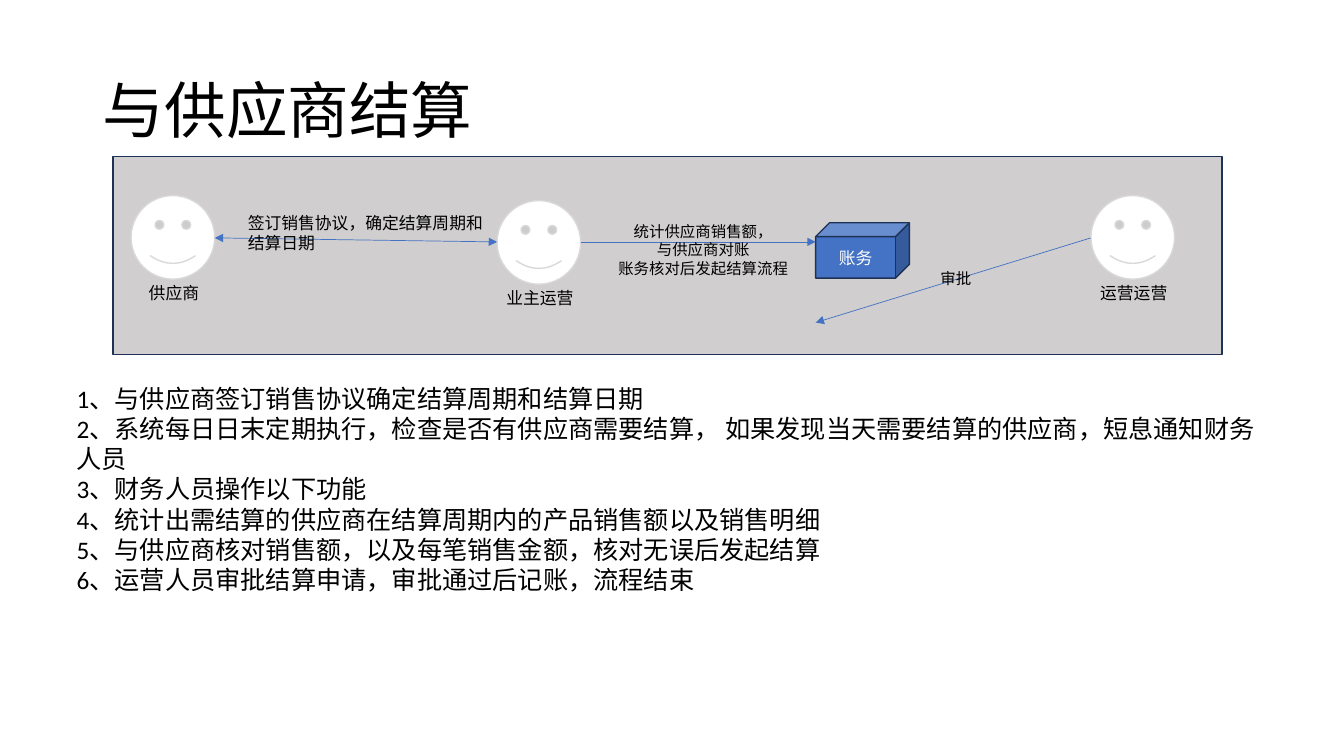
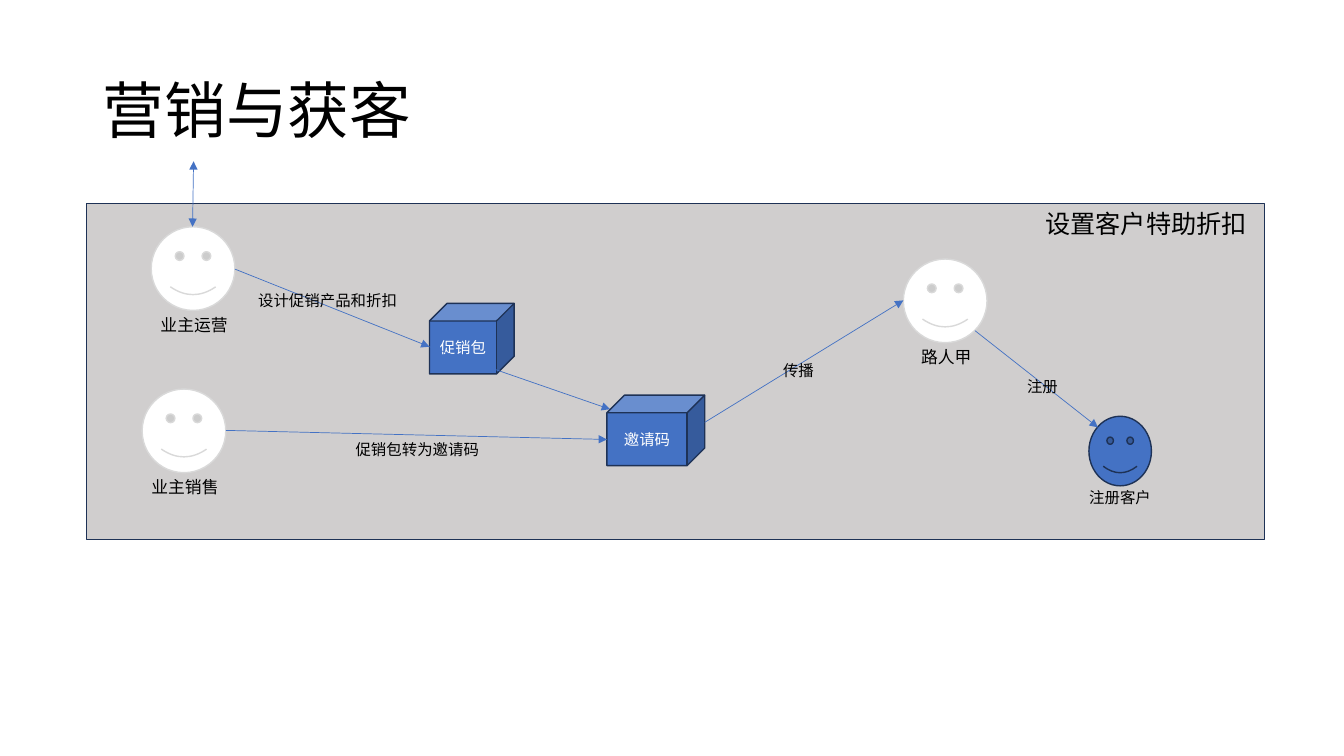
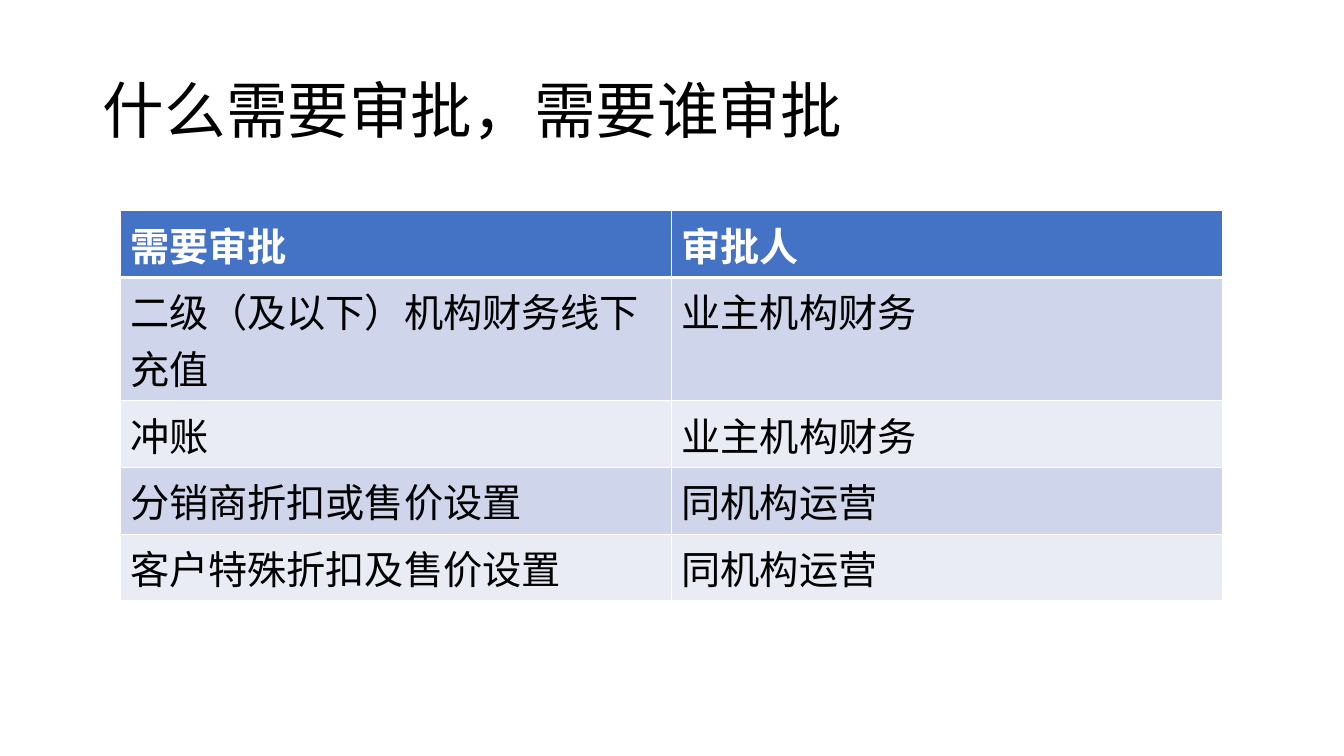
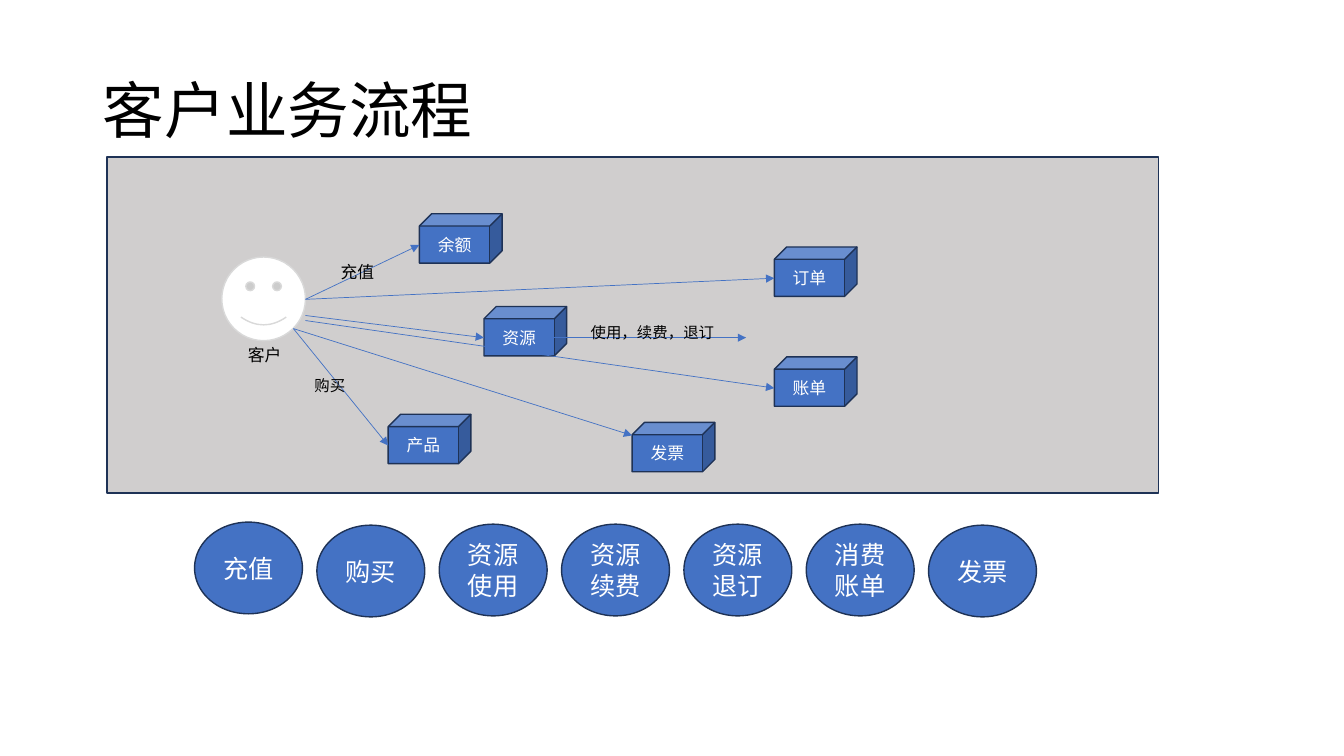
from lxml import etree
from pptx import Presentation
from pptx import util as u
from pptx.dml.color import RGBColor
from pptx.enum import lang, shapes, text
from pptx.oxml import ns

PX = 9144  # 100 px to the inch
FONT = "Calibri"
COLORS = {
    "black": "000000",
    "white": "FFFFFF",
    "blue": "4472C4",
    "navy": "1E3256",
    "panel": "D0CECE",
    "face_line": "D9D9D9",
    "band_dark": "CFD5EA",
    "band_light": "E9EBF5",
}
TITLE_ONLY, TITLE_AND_BODY = 5, 1
LEFT, CENTER = text.PP_ALIGN.LEFT, text.PP_ALIGN.CENTER
FACE_SIZE = 83
CUBE_SIZE = (82, 49)


def px(*lengths):
    return [u.Emu(round(length * PX)) for length in lengths]


def rgb(color):
    return RGBColor.from_string(COLORS[color])


def write(frame, lines, size, color="black", align=LEFT, bold=False):
    """Put each line into its own paragraph of the frame."""
    frame.word_wrap = True
    for index, line in enumerate(lines):
        paragraph = frame.add_paragraph() if index else frame.paragraphs[0]
        paragraph.alignment = align
        run = paragraph.add_run()
        run.text = line
        font = run.font
        font.name, font.size, font.bold = FONT, u.Pt(size), bold
        font.color.rgb = rgb(color)
        font.language_id = lang.MSO_LANGUAGE_ID.SIMPLIFIED_CHINESE


def place(shape, left, top, width, height):
    shape.left, shape.top, shape.width, shape.height = px(left, top, width, height)


def add_slide(presentation, title, layout=TITLE_ONLY):
    slide = presentation.slides.add_slide(presentation.slide_layouts[layout])
    shape = slide.shapes.title
    place(shape, 92, 40, 1150, 145)
    write(shape.text_frame, [title], 44)
    shape.text_frame.vertical_anchor = text.MSO_ANCHOR.MIDDLE
    shape.text_frame.paragraphs[0].line_spacing = 0.9
    return slide


def add_steps(slide, box, steps):
    """Fill the body placeholder with lines that carry their own numbers."""
    body = slide.placeholders[1]
    place(body, *box)
    frame = body.text_frame
    write(frame, steps, 18)
    frame.auto_size = text.MSO_AUTO_SIZE.NONE
    for paragraph in frame.paragraphs:
        paragraph.space_before = u.Pt(0)
        properties = paragraph._p.get_or_add_pPr()
        properties.set("marL", "0")
        properties.set("indent", "0")
        etree.SubElement(properties, ns.qn("a:buNone"))


def add_shape(slide, kind, box, fill="blue", line="navy"):
    shape = slide.shapes.add_shape(kind, *px(*box))
    shape.shadow.inherit = False
    shape.fill.solid()
    shape.fill.fore_color.rgb = rgb(fill)
    shape.line.color.rgb = rgb(line)
    shape.line.width = u.Pt(1)
    return shape


def add_panel(slide, *box):
    add_shape(slide, shapes.MSO_SHAPE.RECTANGLE, box, fill="panel")


def add_label(slide, box, *lines, size=11, align=CENTER):
    label = slide.shapes.add_textbox(*px(*box))
    write(label.text_frame, lines, size, align=align)
    label.text_frame.auto_size = text.MSO_AUTO_SIZE.SHAPE_TO_FIT_TEXT


def add_person(slide, left, top, name):
    """Draw a white smiley with its role below."""
    add_shape(slide, shapes.MSO_SHAPE.SMILEY_FACE, (left, top, FACE_SIZE, FACE_SIZE),
              "white", "face_line")
    add_label(slide, (left - 7, top + 82, 99, 30), name, size=12)


def add_cube(slide, left, top, name, cube_size=CUBE_SIZE, size=12):
    cube = add_shape(slide, shapes.MSO_SHAPE.CUBE, (left, top, *cube_size))
    frame = cube.text_frame
    frame.margin_left = frame.margin_right = 0
    frame.vertical_anchor = text.MSO_ANCHOR.MIDDLE
    write(frame, [name], size, "white", CENTER)


def add_circle(slide, left, top, name):
    circle = add_shape(slide, shapes.MSO_SHAPE.OVAL, (left, top, 107, 91))
    circle.text_frame.vertical_anchor = text.MSO_ANCHOR.MIDDLE
    write(circle.text_frame, [name], 18, "white", CENTER)


def add_arrow(slide, start, end, both=False):
    arrow = slide.shapes.add_connector(shapes.MSO_CONNECTOR.STRAIGHT, *px(*start, *end))
    arrow.line.color.rgb = rgb("blue")
    arrow.line.width = u.Pt(0.5)
    properties = arrow._element.spPr
    line = properties.find(ns.qn("a:ln"))
    for tag in ["a:headEnd", "a:tailEnd"] if both else ["a:tailEnd"]:
        etree.SubElement(line, ns.qn(tag), type="triangle")
    etree.SubElement(properties, ns.qn("a:effectLst"))


def set_borders(cell, bottom):
    """Give the cell white borders, 1 pt wide except for the bottom one."""
    properties = cell._tc.get_or_add_tcPr()
    for side, width in {"L": 1, "R": 1, "T": 1, "B": bottom}.items():
        line = etree.SubElement(properties, ns.qn(f"a:ln{side}"), w=str(u.Pt(width)))
        fill = etree.SubElement(line, ns.qn("a:solidFill"))
        etree.SubElement(fill, ns.qn("a:srgbClr"), val=COLORS["white"])


def add_table(slide, left, top, column_width, row_height, rows):
    columns = len(rows[0])
    frame = slide.shapes.add_table(
        len(rows), columns,
        *px(left, top, column_width * columns, row_height * len(rows)))
    for row_index, row in enumerate(rows):
        header = row_index == 0
        band = "blue" if header else "band_dark" if row_index % 2 else "band_light"
        for column_index, value in enumerate(row):
            cell = frame.table.cell(row_index, column_index)
            set_borders(cell, bottom=3 if header else 1)
            cell.fill.solid()
            cell.fill.fore_color.rgb = rgb(band)
            write(cell.text_frame, [value], 28, "white" if header else "black", bold=header)


def build_settlement(presentation):
    slide = add_slide(presentation, "与供应商结算", TITLE_AND_BODY)
    add_panel(slide, 112, 155, 1100, 197)
    for left, top, name in [(130, 194, "供应商"), (493, 199, "业主运营"),
                            (1082, 194, "运营运营")]:
        add_person(slide, left, top, name)
    add_arrow(slide, (213, 236), (493, 240), both=True)
    add_label(slide, (236, 206, 264, 50), "签订销售协议，确定结算周期和结算日期",
              size=12, align=LEFT)
    add_cube(slide, 809, 221, "账务", (93, 55))
    add_arrow(slide, (576, 240), (809, 240))
    add_label(slide, (563, 215, 269, 66), "统计供应商销售额，", "与供应商对账",
              "账务核对后发起结算流程")
    add_arrow(slide, (1082, 236), (809, 320))
    add_label(slide, (923, 262, 103, 29), "审批", align=LEFT)
    add_steps(slide, (66, 375, 1203, 222), [
        "1、与供应商签订销售协议确定结算周期和结算日期",
        "2、系统每日日末定期执行，检查是否有供应商需要结算， "
        "如果发现当天需要结算的供应商，短息通知财务人员",
        "3、财务人员操作以下功能",
        "4、统计出需结算的供应商在结算周期内的产品销售额以及销售明细",
        "5、与供应商核对销售额，以及每笔销售金额，核对无误后发起结算",
        "6、运营人员审批结算申请，审批通过后记账，流程结束",
    ])


def build_marketing(presentation):
    slide = add_slide(presentation, "营销与获客")
    add_panel(slide, 86, 202, 1168, 333)
    for left, top, name in [(141, 386, "业主销售"), (896, 257, "路人甲"),
                            (150, 225, "业主运营")]:
        add_person(slide, left, top, name)
    add_label(slide, (1027, 202, 224, 40), "设置客户特助折扣", size=18, align=LEFT)
    add_cube(slide, 426, 301, "促销包", (84, 70), 11)
    add_arrow(slide, (192, 160), (191, 225), both=True)
    add_arrow(slide, (426, 344), (605, 406))
    add_cube(slide, 602, 392, "邀请码", (97, 70), 11)
    add_shape(slide, shapes.MSO_SHAPE.SMILEY_FACE, (1080, 413, 62, 69))
    for start, end in [((233, 267), (426, 344)), ((224, 427), (602, 436)),
                       ((699, 419), (896, 298)), ((967, 328), (1089, 424))]:
        add_arrow(slide, start, end)
    for left, top, width, label in [
        (1056, 479, 110, "注册客户"),
        (729, 353, 126, "传播"),
        (971, 369, 126, "注册"),
        (243, 284, 164, "设计促销产品和折扣"),
        (314, 432, 200, "促销包转为邀请码"),
    ]:
        add_label(slide, (left, top, width, 29), label)


def build_approvals(presentation):
    slide = add_slide(presentation, "什么需要审批，需要谁审批")
    add_table(slide, 119, 209, 547, 41, [
        ("需要审批", "审批人"),
        ("二级（及以下）机构财务线下充值", "业主机构财务"),
        ("冲账", "业主机构财务"),
        ("分销商折扣或售价设置", "同机构运营"),
        ("客户特殊折扣及售价设置", "同机构运营"),
    ])


def build_customer_flow(presentation):
    slide = add_slide(presentation, "客户业务流程")
    add_panel(slide, 106, 156, 1043, 333)
    add_person(slide, 220, 255, "客户")
    for left, top, name in [(416, 212, "余额"), (385, 411, "产品"), (480, 304, "资源"),
                            (768, 245, "订单"), (768, 354, "账单"), (627, 419, "发票")]:
        add_cube(slide, left, top, name)
    for start, end in [
        ((303, 297), (416, 243)),
        ((291, 326), (385, 442)),
        ((303, 313), (480, 335)),
        ((549, 335), (740, 335)),
        ((303, 297), (768, 276)),
        ((303, 318), (768, 385)),
        ((291, 326), (627, 432)),
    ]:
        add_arrow(slide, start, end)
    add_label(slide, (328, 255, 58, 30), "充值", size=12, align=LEFT)
    add_label(slide, (302, 368, 55, 29), "购买", align=LEFT)
    add_label(slide, (576, 316, 149, 29), "使用，续费，退订", align=LEFT)
    circles = [(518, "充值"), (521, "购买"), (520, "资源使用"), (520, "资源续费"),
               (520, "资源退订"), (520, "消费账单"), (521, "发票")]
    first, last = 193, 921
    pitch = (last - first) / (len(circles) - 1)
    for index, (top, name) in enumerate(circles):
        add_circle(slide, first + index * pitch, top, name)


def main():
    presentation = Presentation()
    presentation.slide_width, presentation.slide_height = px(1333, 750)
    build_settlement(presentation)
    build_marketing(presentation)
    build_approvals(presentation)
    build_customer_flow(presentation)
    presentation.save("out.pptx")


if __name__ == "__main__":
    main()
